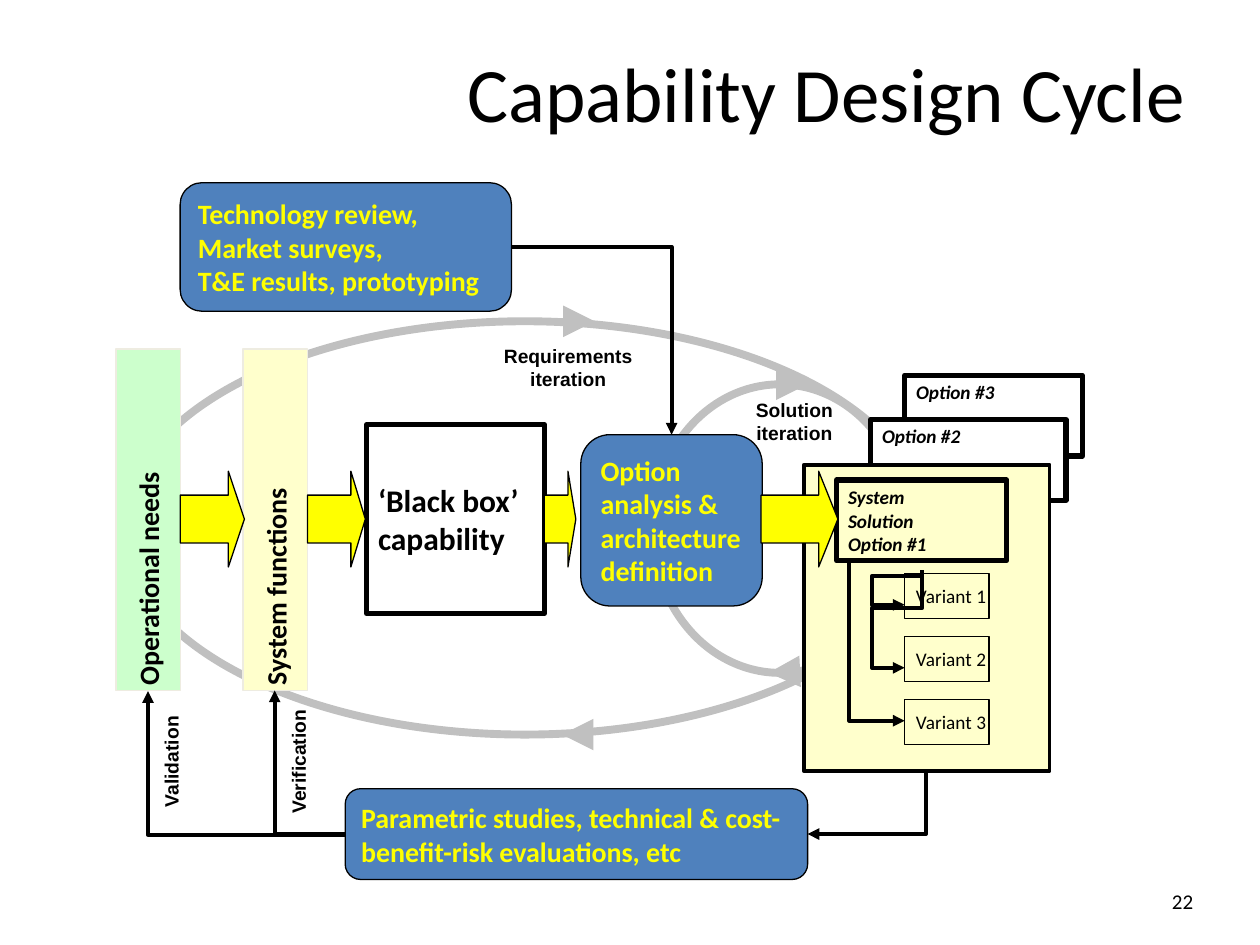
import pptx
import pptx.dml.color
import pptx.enum.shapes
import pptx.enum.text
import pptx.oxml.ns
import pptx.util
from lxml import etree

Inches = pptx.util.Inches
Pt = pptx.util.Pt
qn = pptx.oxml.ns.qn
Shape = pptx.enum.shapes.MSO_SHAPE
Connector = pptx.enum.shapes.MSO_CONNECTOR
Anchor = pptx.enum.text.MSO_ANCHOR
Align = pptx.enum.text.PP_ALIGN

BLACK, WHITE, GREY = "000000", "FFFFFF", "C0C0C0"
BLUE, YELLOW, CREAM, GREEN, TAN = "4F81BD", "FFFF00", "FFFFCC", "CCFFCC", "EEECE1"


def color(hex_value):
    return pptx.dml.color.RGBColor.from_string(hex_value)


class DiagramSlide:
    fonts = {
        "title": {"name": "Calibri", "size": Pt(44)},
        "number": {"name": "Calibri", "size": Pt(12)},
        "option": {"name": "Calibri", "size": Pt(11), "bold": True, "italic": True},
        "variant": {"name": "Calibri", "size": Pt(11)},
        "step": {"name": "Calibri", "size": Pt(16), "bold": True},
        "black box": {"name": "Calibri", "size": Pt(18), "bold": True},
        "label": {"name": "Arial", "size": Pt(11), "bold": True},
    }
    insets = {"margin_left": Inches(0.09), "margin_right": Inches(0.09),
              "margin_top": Inches(0.04), "margin_bottom": Inches(0.04)}

    def __init__(self, presentation):
        self.slide = presentation.slides.add_slide(presentation.slide_layouts[5])

    def set_text(self, shape, text, style, ink=BLACK, align=Align.LEFT,
                 anchor=Anchor.MIDDLE, wrap=True):
        frame = shape.text_frame
        frame.text = text
        settings = {"word_wrap": wrap, "vertical_anchor": anchor, **self.insets}
        for name, value in settings.items():
            setattr(frame, name, value)
        for paragraph in frame.paragraphs:
            paragraph.alignment = align
            for name, value in self.fonts[style].items():
                setattr(paragraph.font, name, value)
            paragraph.font.color.rgb = color(ink)

    def title(self, text, left, top, width, height):
        shape = self.slide.shapes.title
        place = {"left": left, "top": top, "width": width, "height": height}
        for name, value in place.items():
            setattr(shape, name, Inches(value))
        self.set_text(shape, text, "title", align=Align.RIGHT)

    def label(self, text, left, top, width, height, style="label",
              align=Align.CENTER, anchor=Anchor.TOP, rotation=0):
        box = self.slide.shapes.add_textbox(*map(Inches, (left, top, width, height)))
        box.rotation = rotation
        self.set_text(box, text, style, align=align, anchor=anchor)

    def shape(self, kind, left, top, width, height, fill=None, line=BLACK,
              weight=0.75, adjustments=()):
        shape = self.slide.shapes.add_shape(
            kind, *map(Inches, (left, top, width, height)))
        shape.shadow.inherit = False
        if fill:
            shape.fill.solid()
            shape.fill.fore_color.rgb = color(fill)
        else:
            shape.fill.background()
        shape.line.color.rgb = color(line)
        shape.line.width = Pt(weight)
        for index, value in enumerate(adjustments):
            shape.adjustments[index] = value
        return shape

    def process(self, text, *place):
        """Blue rounded box with yellow text."""
        shape = self.shape(Shape.ROUNDED_RECTANGLE, *place, BLUE, adjustments=[0.17])
        self.set_text(shape, text, "step", YELLOW)

    def box(self, text, style, *place, fill=WHITE, weight=3, anchor=Anchor.MIDDLE):
        shape = self.shape(Shape.RECTANGLE, *place, fill, weight=weight)
        self.set_text(shape, text, style, anchor=anchor, wrap=False)

    def column(self, text, left, fill, weight):
        """Tall bar whose text reads upwards."""
        shape = self.shape(Shape.RECTANGLE, left, 2.77, 0.51, 2.71, fill, TAN, weight)
        shape.rotation = 180
        self.set_text(shape, text, "step", wrap=False)
        shape.element.txBody.find(qn("a:bodyPr")).set("vert", "eaVert")

    def connector(self, kind, begin, end, line, weight, arrow_end):
        connector = self.slide.shapes.add_connector(kind, *map(Inches, begin + end))
        connector.line.color.rgb = color(line)
        connector.line.width = Pt(weight)
        properties = connector.element.spPr
        etree.SubElement(properties.find(qn("a:ln")), qn(arrow_end), type="triangle")
        etree.SubElement(properties, qn("a:effectLst"))
        return connector

    def loop_arrow(self, begin, end):
        self.connector(Connector.STRAIGHT, begin, end, GREY, 6, "a:tailEnd")

    def elbow(self, left, top, width, height, rotation=0, flip="", bends=()):
        """Bent arrow given by its frame before rotation; the head is at its start."""
        x, y = [left, left + width], [top, top + height]
        if flip == "h":
            x.reverse()
        if flip == "v":
            y.reverse()
        connector = self.connector(
            Connector.ELBOW, (x[0], y[0]), (x[1], y[1]), BLACK, 2.25, "a:headEnd")
        properties = connector.element.spPr
        properties.find(qn("a:xfrm")).set("rot", str(rotation * 60000))
        geometry = properties.find(qn("a:prstGeom"))
        geometry.set("prst", f"bentConnector{len(bends) + 2}")
        guides = geometry.find(qn("a:avLst"))
        for number, value in enumerate(bends, 1):
            etree.SubElement(guides, qn("a:gd"), name=f"adj{number}",
                             fmla=f"val {round(value * 100000)}")


def build():
    presentation = pptx.Presentation()
    presentation.slide_width, presentation.slide_height = Inches(10), Inches(7.5)
    diagram = DiagramSlide(presentation)

    diagram.title("Capability Design Cycle", 1.93, 0.31, 7.57, 0.84)
    diagram.label("22", 7.23, 6.95, 2.33, 0.4, "number", Align.RIGHT, Anchor.MIDDLE)

    for loop in [(5.18, 3.05, 2.02, 2.29), (0.98, 2.55, 6.37, 3.28)]:
        diagram.shape(Shape.OVAL, *loop, line=GREY, weight=4.5)

    diagram.box("Option #3", "option", 7.18, 2.98, 1.41, 0.64, anchor=Anchor.TOP)
    diagram.box("Option #2", "option", 6.91, 3.33, 1.55, 0.64, anchor=Anchor.TOP)
    diagram.shape(Shape.RECTANGLE, 6.38, 3.69, 1.95, 2.43, CREAM, weight=2.25)
    diagram.box("System\nSolution\nOption #1", "option", 6.64, 3.81, 1.35, 0.64,
                fill=CREAM)

    diagram.column("Operational needs", 0.92, GREEN, 0.75)
    diagram.process("Technology review,\vMarket surveys,\vT&E results, prototyping",
                    1.43, 1.45, 2.63, 1.02)
    diagram.column("System functions", 1.93, CREAM, 1)

    for begin, end in [((6.21, 3.05), (6.41, 3.05)), ((6.31, 5.33), (6.1, 5.34)),
                       ((4.66, 5.83), (4.46, 5.83)), ((4.52, 2.55), (4.72, 2.55))]:
        diagram.loop_arrow(begin, end)

    diagram.process("Option analysis & architecture definition", 4.61, 3.45, 1.44, 1.36)
    diagram.elbow(3.95, 2.07, 1.49, 1.27, 270, "v")
    diagram.label("Solution iteration", 5.8, 3.12, 1.01, 0.46)
    diagram.label("Requirements iteration", 3.85, 2.69, 1.32, 0.46)
    diagram.process("Parametric studies, technical & cost-benefit-risk evaluations, etc",
                    2.74, 6.26, 3.67, 0.72)
    diagram.elbow(6.41, 6.12, 0.94, 0.5, flip="v")
    diagram.elbow(1.89, 5.77, 1.14, 0.56, 270, "h")
    diagram.box("‘Black box’\ncapability", "black box", 2.91, 3.37, 1.41, 1.5)
    diagram.elbow(1.39, 5.27, 1.14, 1.57, 270, "h")
    for text, left in [("Verification", 1.8), ("Validation", 0.79)]:
        diagram.label(text, left, 5.91, 1.14, 0.27, rotation=270)

    for number in range(1, 4):
        diagram.box(f"Variant {number}", "variant", 7.18, 4.05 + 0.5 * number,
                    0.67, 0.36, fill=CREAM, weight=0.75)
    for height, bend in [(0.28, 0.82), (0.78, 0.61)]:
        diagram.elbow(7.18, 4.52, 0.14, height, 180, "h", (-1.85, bend))
    diagram.elbow(6.74, 4.46, 0.44, 1.26, 180)

    for left, width in [(6.04, 0.61), (4.32, 0.25), (2.44, 0.46), (1.43, 0.51)]:
        diagram.shape(Shape.RIGHT_ARROW, left, 3.74, width, 0.76, YELLOW,
                      adjustments=[0.5, 0.25])

    presentation.save("out.pptx")


if __name__ == "__main__":
    build()
